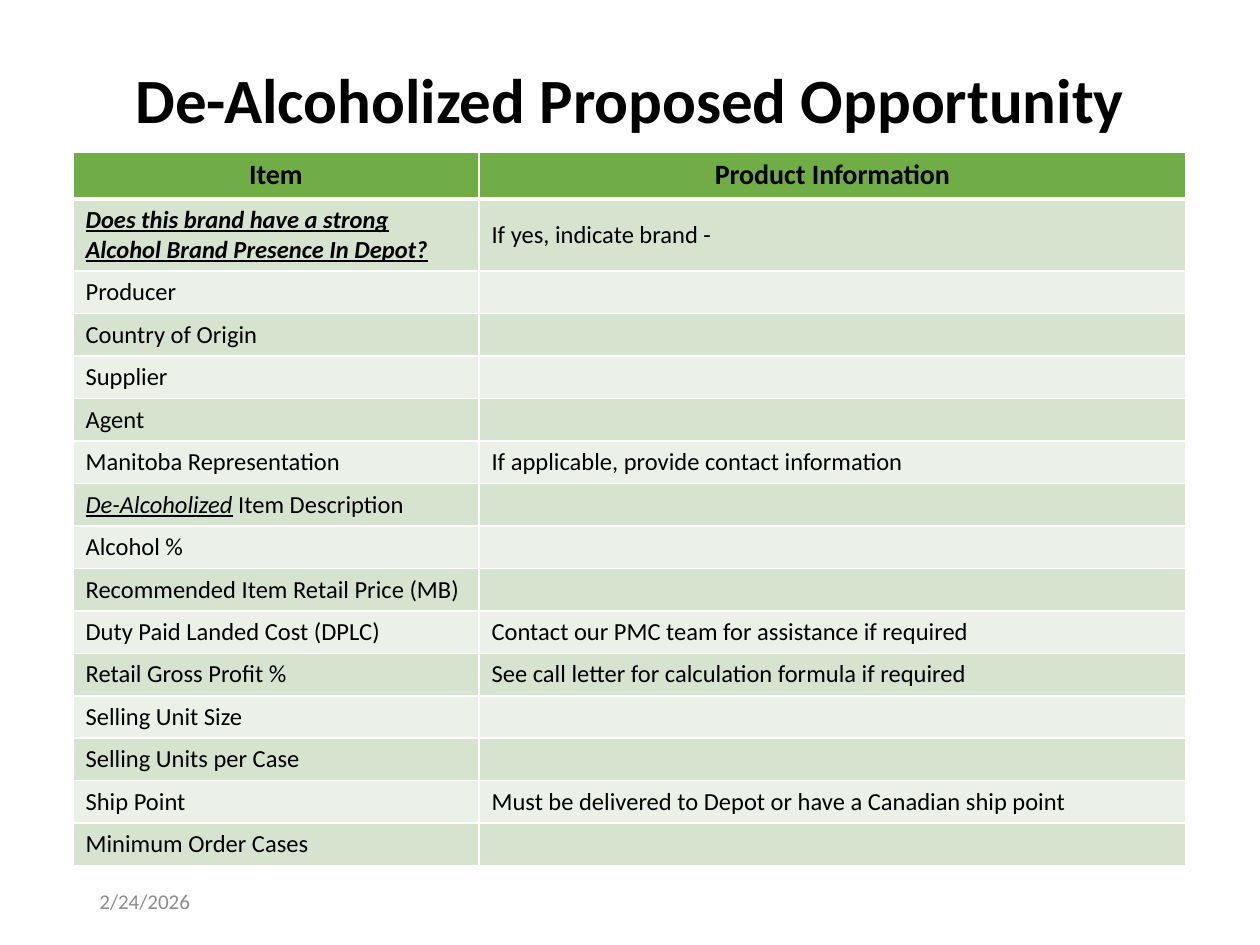
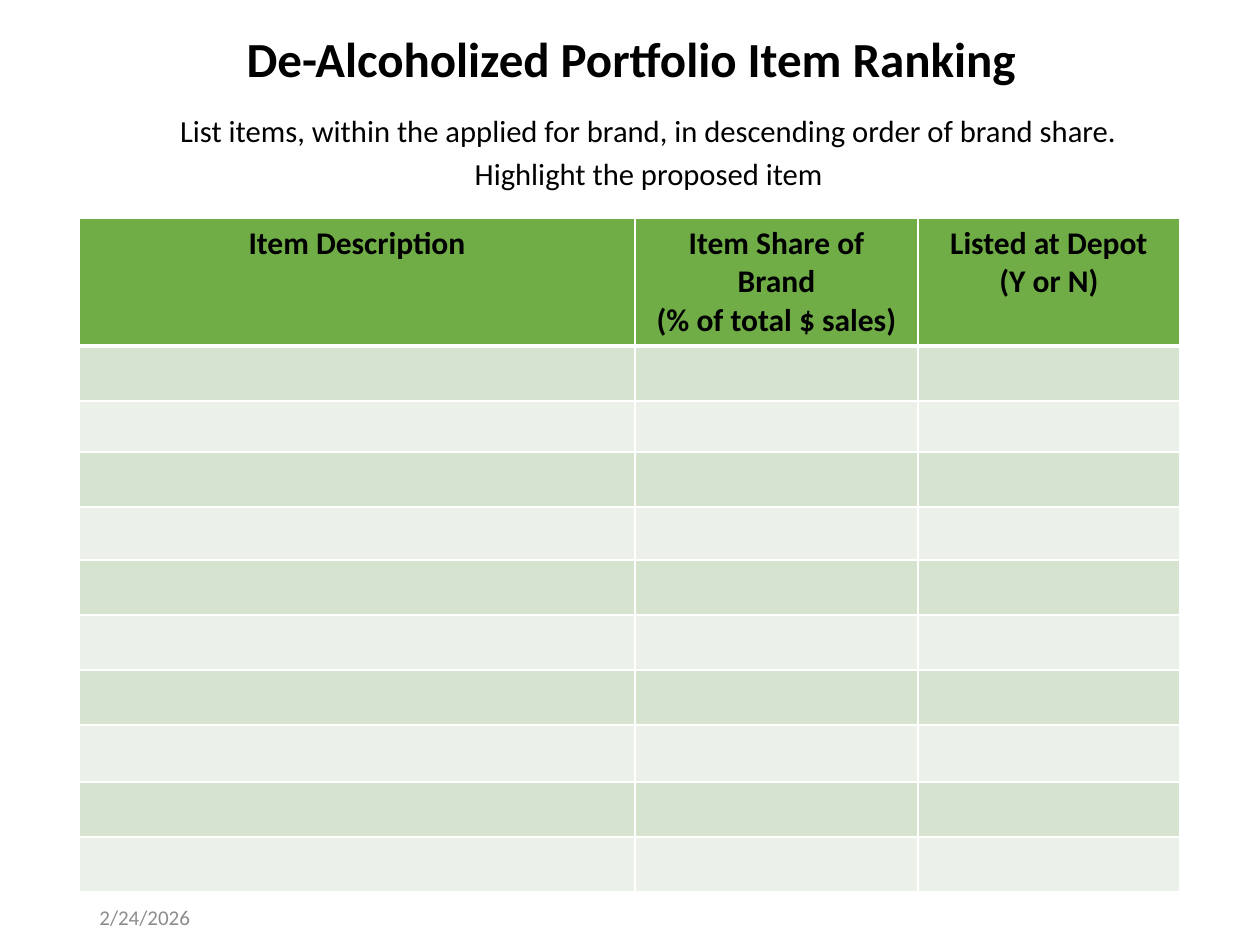
from lxml.etree import SubElement
from pptx import Presentation
from pptx.dml.color import RGBColor
from pptx.enum.text import MSO_ANCHOR as Anchor, MSO_AUTO_SIZE as Fit, PP_ALIGN as Align
from pptx.oxml.ns import qn
from pptx.util import Pt

SCALE = 914400 / 126
WIDE, HIGH = 1260, 945
BLACK = RGBColor(0x00, 0x00, 0x00)
WHITE = RGBColor(0xFF, 0xFF, 0xFF)
GREY = RGBColor(0x8C, 0x8C, 0x8C)
GREEN = RGBColor(0x70, 0xAD, 0x47)
BANDS = RGBColor(0xEB, 0xF1, 0xE9), RGBColor(0xD5, 0xE3, 0xCF)
FACE = "Calibri"
DATE = "2/24/2026"

ITEMS = [
    ("Item", "Product Information"),
    ("_Does this brand have a strong Alcohol Brand Presence In Depot?_",
     "If yes, indicate brand -"),
    ("Producer", ""),
    ("Country of Origin", ""),
    ("Supplier", ""),
    ("Agent", ""),
    ("Manitoba Representation", "If applicable, provide contact information"),
    ("_De-Alcoholized_ Item Description", ""),
    ("Alcohol %", ""),
    ("Recommended Item Retail Price (MB)", ""),
    ("Duty Paid Landed Cost (DPLC)", "Contact our PMC team for assistance if required"),
    ("Retail Gross Profit %", "See call letter for calculation formula if required"),
    ("Selling Unit Size", ""),
    ("Selling Units per Case", ""),
    ("Ship Point", "Must be delivered to Depot or have a Canadian ship point"),
    ("Minimum Order Cases", ""),
]
RANKS = [("Item Description", "Item Share of Brand\n(% of total $ sales)",
          "Listed at Depot\n(Y or N)")] + [("", "", "")] * 10


def px(size):
    return round(size * SCALE)


class Deck:
    def __init__(self):
        self.show = Presentation()
        self.show.slide_width, self.show.slide_height = px(WIDE), px(HIGH)
        self.slide = None

    def style(self, par, size, color=BLACK, bold=False, align=Align.LEFT):
        par.alignment = align
        font = par.font
        font.name, font.size, font.bold = FACE, Pt(size), bold
        font.color.rgb = color

    def title(self, text, box, size):
        self.slide = self.show.slides.add_slide(self.show.slide_layouts[5])
        head = self.slide.shapes.title
        head.left, head.top, head.width, head.height = map(px, box)
        frame = head.text_frame
        frame.text, frame.auto_size = text, Fit.NONE
        frame.vertical_anchor = Anchor.MIDDLE
        par = frame.paragraphs[0]
        self.style(par, size, bold=True, align=Align.CENTER)
        par.line_spacing = 0.9

    def text(self, text, box, anchor=Anchor.TOP):
        frame = self.slide.shapes.add_textbox(*map(px, box)).text_frame
        frame.word_wrap, frame.auto_size = True, Fit.NONE
        frame.vertical_anchor = anchor
        frame.text = text
        return frame.paragraphs

    def note(self, text, box):
        for spot, par in enumerate(self.text(text, box)):
            self.style(par, 17.5, align=Align.CENTER)
            par.line_spacing = 0.7
            if spot:
                par.space_before = Pt(10)

    def date(self, top, high):
        par = self.text(DATE, (87, top, 284, high), Anchor.MIDDLE)[0]
        self.style(par, 12, GREY)

    def edges(self, cell, row):
        props = cell._tc.get_or_add_tcPr()
        for side in "LRTB":
            thick = (row, side) in ((0, "B"), (1, "T"))
            line = SubElement(props, qn(f"a:ln{side}"), w=str(Pt(3 if thick else 1)))
            fill = SubElement(line, qn("a:solidFill"))
            SubElement(fill, qn("a:srgbClr"), val=str(WHITE))

    def words(self, par, text, size):
        for spot, part in enumerate(text.split("_")):
            if part:
                run = par.add_run()
                run.text = part
                if spot % 2:
                    run.font.italic = run.font.underline = True
        if not text:
            SubElement(par._p, qn("a:endParaRPr"), sz=str(size * 100))

    def cell(self, cell, text, row, sizes):
        head = row == 0
        size = sizes[0] if head else sizes[1]
        self.edges(cell, row)
        cell.fill.solid()
        cell.fill.fore_color.rgb = GREEN if head else BANDS[row % 2]
        cell.vertical_anchor = Anchor.TOP if head else Anchor.MIDDLE
        frame = cell.text_frame
        for spot, line in enumerate(text.split("\n")):
            par = frame.add_paragraph() if spot else frame.paragraphs[0]
            strong = head or (line.startswith("_") and line.endswith("_"))
            self.style(par, size, bold=strong, align=Align.CENTER if head else Align.LEFT)
            self.words(par, line, size)

    def table(self, rows, spot, cols, tall, sizes):
        box = map(px, (*spot, sum(cols), sum(tall)))
        grid = self.slide.shapes.add_table(len(rows), len(cols), *box).table
        for col, wide in zip(grid.columns, cols):
            col.width = px(wide)
        for row, (line, high) in enumerate(zip(rows, tall)):
            grid.rows[row].height = px(high)
            for col, text in enumerate(line):
                self.cell(grid.cell(row, col), text, row, sizes)


def main():
    deck = Deck()
    deck.title("De-Alcoholized Proposed Opportunity", (87, 50, 1086, 106), 36)
    deck.date(876, 50)
    deck.table(ITEMS, (73, 152), (406, 707), [44, 68] + [42] * 14, (16, 14))

    deck.title("De-Alcoholized Portfolio Item Ranking", (64, 20, 1134, 84), 28)
    deck.note("List items, within the applied for brand, in descending order of brand share.\n"
              "Highlight the proposed item", (116, 116, 1066, 84))
    deck.table(RANKS, (79, 218), (556, 283, 262),
               (127, 55, 50, 55, 53, 55, 55, 55, 57, 55, 55), (18, 18))
    deck.date(908, 19)
    deck.show.save("out.pptx")


if __name__ == "__main__":
    main()
